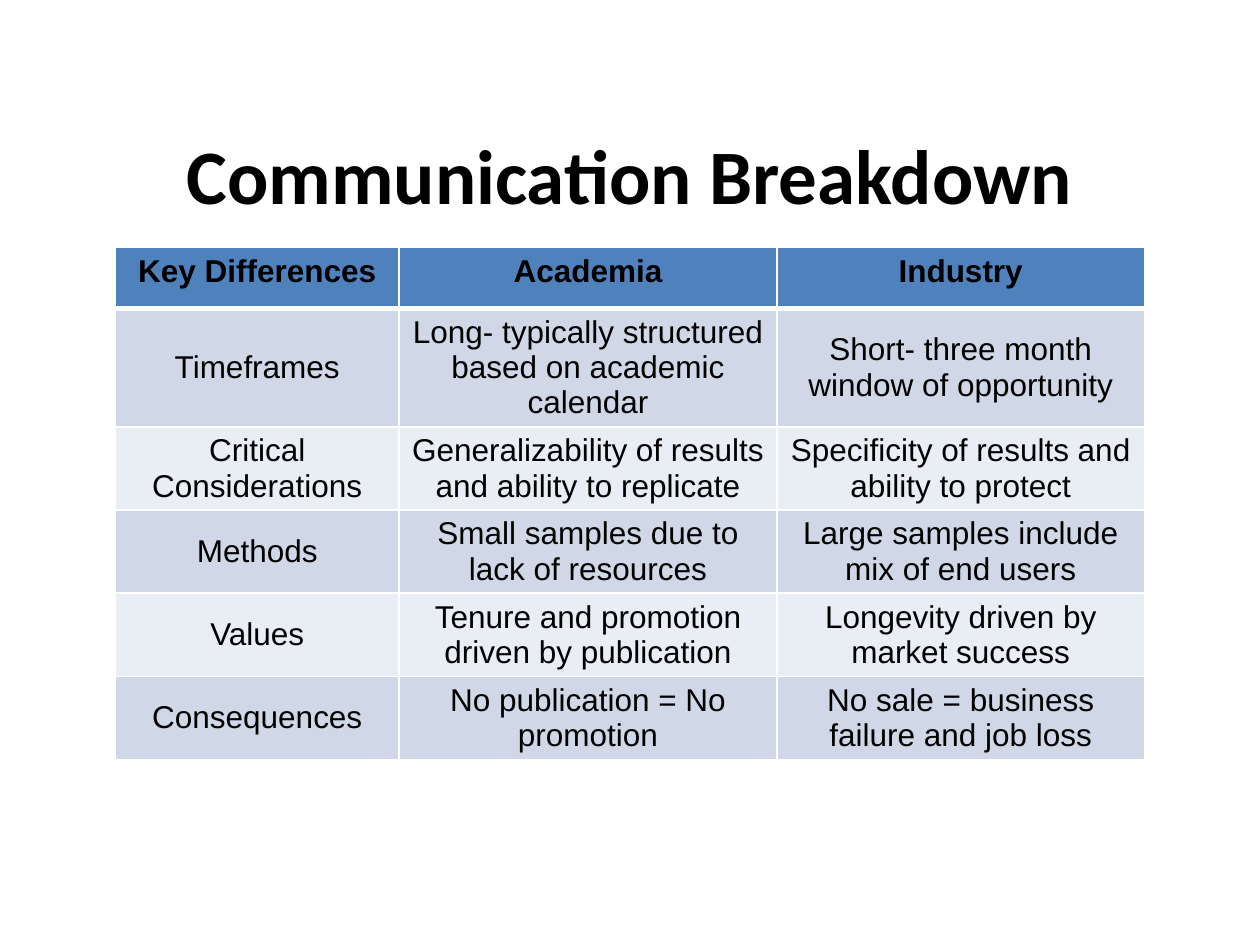
import dataclasses

import lxml.etree
import pptx
import pptx.dml.color
import pptx.enum.text
import pptx.oxml.ns
import pptx.util

Pt = pptx.util.Pt
Align = pptx.enum.text.PP_ALIGN
Anchor = pptx.enum.text.MSO_ANCHOR


@dataclasses.dataclass(frozen=True)
class Theme:
    ink: str = "000000"
    head: str = "4F81BD"
    bands: tuple = ("D0D8E8", "E9EDF4")
    rule: str = "FFFFFF"
    title_font: str = "Calibri"
    body_font: str = "Arial"
    title_size: int = 44
    body_size: int = 18


class Deck:
    def __init__(self, theme):
        self.theme = theme
        self.file = pptx.Presentation()
        self.file.slide_width, self.file.slide_height = Pt(720), Pt(540)
        self.slide = self.file.slides.add_slide(self.file.slide_layouts[5])

    def color(self, code):
        return pptx.dml.color.RGBColor.from_string(code)

    def label(self, frame, text, face, size, bold):
        line = frame.paragraphs[0]
        line.alignment = Align.CENTER
        run = line.add_run()
        run.text = text
        run.font.name = face
        run.font.size = Pt(size)
        run.font.bold = bold
        run.font.color.rgb = self.color(self.theme.ink)

    def title(self, text, left, top, width, height):
        box = self.slide.shapes.title
        box.left, box.top = Pt(left), Pt(top)
        box.width, box.height = Pt(width), Pt(height)
        frame = box.text_frame
        frame.word_wrap = True
        frame.vertical_anchor = Anchor.MIDDLE
        self.label(frame, text, self.theme.title_font, self.theme.title_size, True)

    def border(self, cell, side, width):
        tag = pptx.oxml.ns.qn
        props = cell._tc.get_or_add_tcPr()
        edge = lxml.etree.SubElement(props, tag(f"a:ln{side}"), w=str(Pt(width)))
        fill = lxml.etree.SubElement(edge, tag("a:solidFill"))
        lxml.etree.SubElement(fill, tag("a:srgbClr"), val=self.theme.rule)

    def cell(self, cell, text, row):
        head = row == 0
        cell.vertical_anchor = Anchor.TOP if head else Anchor.MIDDLE
        widths = {
            "L": 1,
            "R": 1,
            "T": 3 if row == 1 else 1,
            "B": 3 if head else 1,
        }
        for side, width in widths.items():
            self.border(cell, side, width)
        bands = self.theme.bands
        cell.fill.solid()
        cell.fill.fore_color.rgb = self.color(
            self.theme.head if head else bands[(row - 1) % len(bands)]
        )
        self.label(
            cell.text_frame, text, self.theme.body_font, self.theme.body_size, head
        )

    def table(self, data, left, top, height, widths, first, rest):
        shape = self.slide.shapes.add_table(
            len(data), len(widths), Pt(left), Pt(top), Pt(sum(widths)), Pt(height)
        )
        grid = shape.table
        for col, width in zip(grid.columns, widths):
            col.width = Pt(width)
        for row, texts in enumerate(data):
            grid.rows[row].height = Pt(rest if row else first)
            for col, text in enumerate(texts):
                self.cell(grid.cell(row, col), text, row)
        shape.height = Pt(height)


ROWS = [
    ("Key Differences", "Academia", "Industry"),
    (
        "Timeframes",
        "Long- typically structured based on academic calendar",
        "Short- three month window of opportunity",
    ),
    (
        "Critical Considerations",
        "Generalizability of results and ability to replicate",
        "Specificity of results and ability to protect",
    ),
    (
        "Methods",
        "Small samples due to lack of resources",
        "Large samples include mix of end users",
    ),
    (
        "Values",
        "Tenure and promotion driven by publication",
        "Longevity driven by market success",
    ),
    (
        "Consequences",
        "No publication = No promotion",
        "No sale = business failure and job loss",
    ),
]


def main():
    deck = Deck(Theme())
    deck.title("Communication Breakdown", 36, 54, 648, 90)
    deck.table(ROWS, 66, 141.25, 309, (162, 216, 210), 35, 29.5)
    deck.file.save("out.pptx")


if __name__ == "__main__":
    main()
